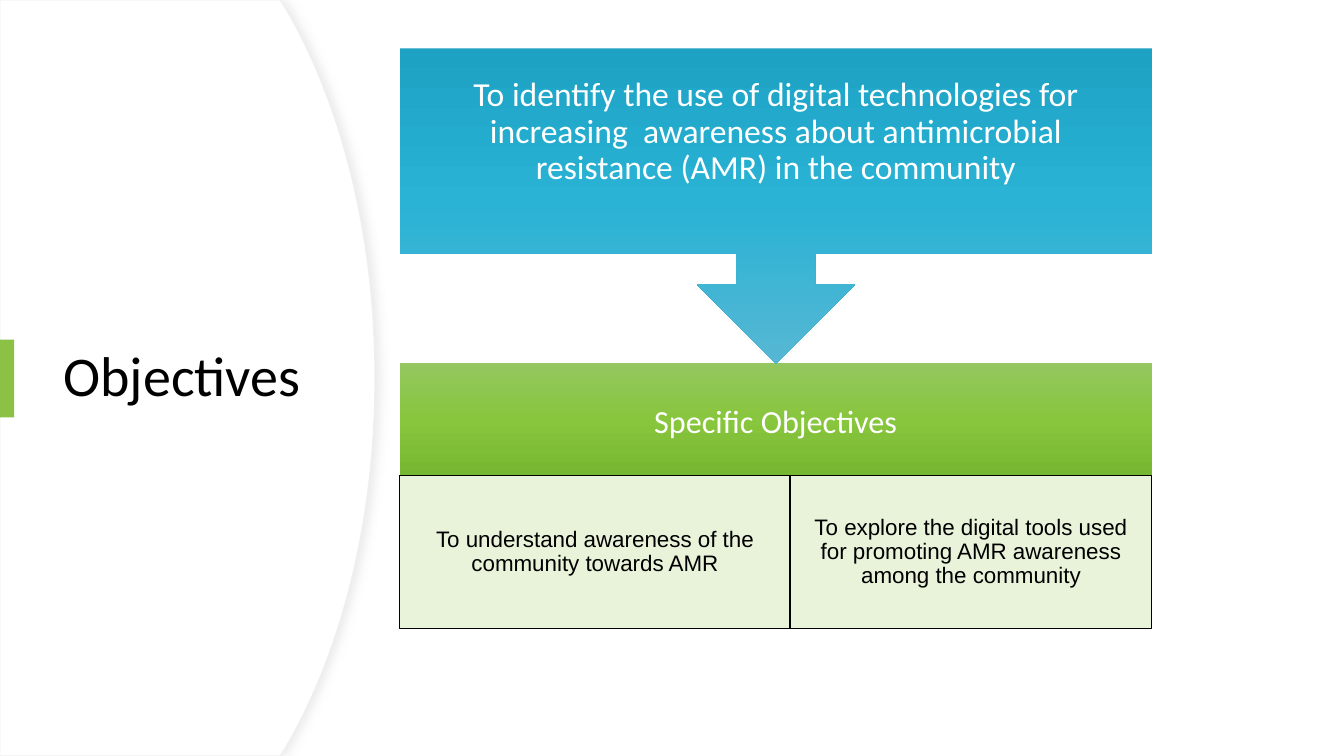
"""Build the Objectives slide: a curved title panel beside a goal that leads to two specific objectives."""
from dataclasses import dataclass
from typing import Optional

from lxml.etree import SubElement
from pptx import Presentation
from pptx.dml.color import RGBColor
from pptx.enum.shapes import MSO_SHAPE
from pptx.enum.text import MSO_ANCHOR, PP_ALIGN
from pptx.oxml.ns import qn
from pptx.util import Cm, Pt

SLIDE_WIDTH, SLIDE_HEIGHT = 33.87, 19.05
TITLE_TOP, TITLE_HEIGHT = 8.56, 1.96
COLUMN_LEFT, COLUMN_WIDTH = 10.08, 18.95
DETAIL_TOP, DETAIL_HEIGHT, DETAIL_SPLIT = 11.99, 3.86, 9.83
CURVE_STEPS = 40


@dataclass(frozen=True)
class Block:
    left: float
    top: float
    width: float
    height: float
    fills: tuple[str, ...]
    text: str = ""
    size: float = 16
    font: str = "Calibri"
    color: str = "FFFFFF"
    insets: tuple[float, float, float, float] = (0.46, 0.46, 0.46, 0.46)
    line: Optional[str] = None
    kind: MSO_SHAPE = MSO_SHAPE.RECTANGLE


def rgb(value: str) -> RGBColor:
    return RGBColor.from_string(value)


def set_line(shape, color: Optional[str]) -> None:
    if color is None:
        shape.line.fill.background()
    else:
        shape.line.color.rgb = rgb(color)
        shape.line.width = Pt(0.75)


def set_fill(shape, colors: tuple[str, ...]) -> None:
    if len(colors) == 1:
        shape.fill.solid()
        shape.fill.fore_color.rgb = rgb(colors[0])
        return
    shape.fill.gradient()
    shape.fill.gradient_angle = 270
    stops = shape.element.spPr.find(qn("a:gradFill")).find(qn("a:gsLst"))
    for stop in list(stops):
        stops.remove(stop)
    for index, color in enumerate(colors):
        position = 100000 * index // (len(colors) - 1)
        stop = SubElement(stops, qn("a:gs"), pos=str(position))
        SubElement(stop, qn("a:srgbClr"), val=color)


def write_text(shape, text: str, size: float, font: str, color: str,
               insets: tuple[float, float, float, float], align: PP_ALIGN) -> None:
    frame = shape.text_frame
    frame.text = text
    frame.word_wrap = True
    frame.vertical_anchor = MSO_ANCHOR.MIDDLE
    frame.margin_left, frame.margin_top, frame.margin_right, frame.margin_bottom = map(Cm, insets)
    paragraph = frame.paragraphs[0]
    paragraph.alignment = align
    paragraph.line_spacing = 0.9
    for run in paragraph.runs:
        run.font.size = Pt(size)
        run.font.name = font
        run.font.color.rgb = rgb(color)


def draw_block(slide, block: Block) -> None:
    shape = slide.shapes.add_shape(block.kind, Cm(block.left), Cm(block.top),
                                   Cm(block.width), Cm(block.height))
    shape.shadow.inherit = False
    set_fill(shape, block.fills)
    set_line(shape, block.line)
    if block.kind == MSO_SHAPE.DOWN_ARROW_CALLOUT:
        shape.adjustments[3] = 0.65
    if block.text:
        write_text(shape, block.text, block.size, block.font, block.color,
                   block.insets, PP_ALIGN.CENTER)


def upper_curve() -> list[tuple[float, float]]:
    controls = ((7.19, 0.2), (8.59, 2.59), (9.45, 5.89), (9.45, SLIDE_HEIGHT / 2))
    points = []
    for step in range(CURVE_STEPS + 1):
        t = step / CURVE_STEPS
        weights = ((1 - t) ** 3, 3 * t * (1 - t) ** 2, 3 * t ** 2 * (1 - t), t ** 3)
        points.append((sum(w * x for w, (x, _) in zip(weights, controls)),
                       sum(w * y for w, (_, y) in zip(weights, controls))))
    return points


def draw_title_panel(slide) -> None:
    upper = [(7.06, 0.0)] + upper_curve()
    lower = [(x, SLIDE_HEIGHT - y) for x, y in reversed(upper[:-1])]
    outline = upper + lower + [(0.0, SLIDE_HEIGHT)]
    builder = slide.shapes.build_freeform(0, 0)
    builder.add_line_segments([(Cm(x), Cm(y)) for x, y in outline], close=True)
    panel = builder.convert_to_shape()
    panel.shadow.inherit = False
    set_fill(panel, ("FFFFFF",))
    set_line(panel, "EFEFEF")
    effects = panel.element.spPr.find(qn("a:effectLst"))
    shadow = SubElement(effects, qn("a:outerShdw"), blurRad=str(Pt(7)), dist=str(Pt(3)),
                        dir="0", algn="l", rotWithShape="0")
    shade = SubElement(shadow, qn("a:srgbClr"), val="D8D8D8")
    SubElement(shade, qn("a:alpha"), val="50000")


def draw_title(slide) -> None:
    title = slide.shapes.add_textbox(Cm(1.35), Cm(TITLE_TOP), Cm(6.73), Cm(TITLE_HEIGHT))
    write_text(title, "Objectives", 40, "Calibri", "000000",
               (0.25, 0.13, 0.25, 0.13), PP_ALIGN.LEFT)


def detail(left: float, width: float, text: str) -> Block:
    return Block(left, DETAIL_TOP, width, DETAIL_HEIGHT, ("E8F3DA",), text,
                 font="Arial", color="000000", insets=(0.28, 0.05, 0.28, 0.05), line="000000")


def main() -> None:
    presentation = Presentation()
    presentation.slide_width, presentation.slide_height = Cm(SLIDE_WIDTH), Cm(SLIDE_HEIGHT)
    slide = presentation.slides.add_slide(presentation.slide_layouts[6])
    draw_title_panel(slide)
    draw_title(slide)
    blocks = (
        Block(0, TITLE_TOP, 0.36, TITLE_HEIGHT, ("8BC145",)),
        Block(COLUMN_LEFT, 9.14, COLUMN_WIDTH, DETAIL_TOP - 9.14,
              ("94C75F", "88C63E", "77B630"), "Specific Objectives", 23,
              insets=(0.46, 0.66, 0.46, 0.46)),
        detail(COLUMN_LEFT, DETAIL_SPLIT,
               "To understand awareness of the community towards AMR"),
        detail(COLUMN_LEFT + DETAIL_SPLIT, COLUMN_WIDTH - DETAIL_SPLIT,
               "To explore the digital tools used for promoting AMR awareness among the community"),
        Block(COLUMN_LEFT, 1.22, COLUMN_WIDTH, 7.95, ("1DA2C4", "2AB3D5", "55B7D3"),
              "To identify the use of digital technologies for increasing  awareness about "
              "antimicrobial resistance (AMR) in the community", 24,
              insets=(0.46, 0.46, 0.46, 1.4), kind=MSO_SHAPE.DOWN_ARROW_CALLOUT),
    )
    for block in blocks:
        draw_block(slide, block)
    presentation.save("out.pptx")


if __name__ == "__main__":
    main()
